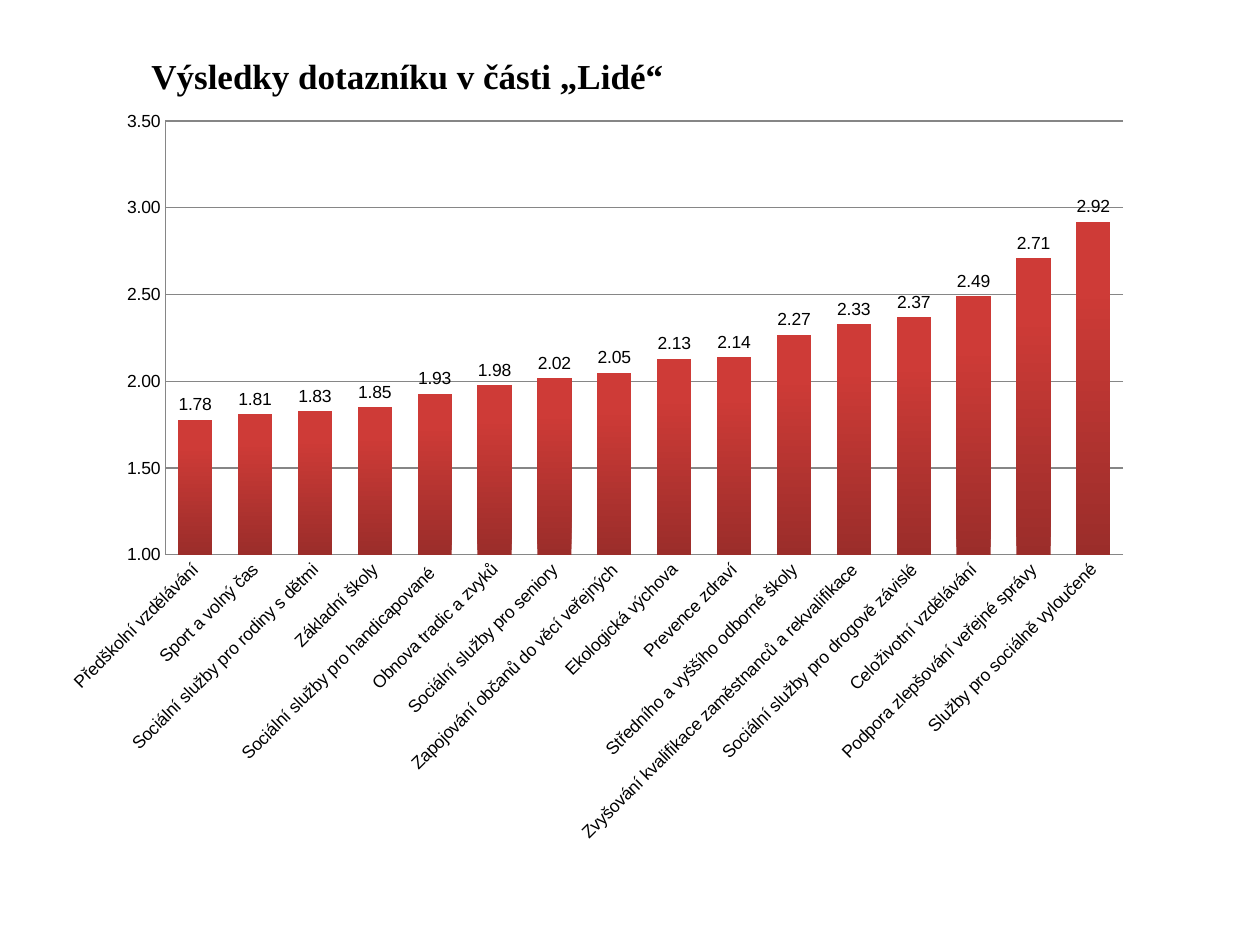
from dataclasses import dataclass

from pptx import Presentation
from pptx.chart.data import CategoryChartData
from pptx.dml.color import RGBColor
from pptx.enum.chart import XL_CHART_TYPE as ChartType
from pptx.enum.chart import XL_LABEL_POSITION as LabelPosition
from pptx.enum.chart import XL_TICK_MARK as TickMark
from pptx.enum.text import MSO_ANCHOR as Anchor
from pptx.enum.text import MSO_AUTO_SIZE as AutoSize
from pptx.enum.text import PP_ALIGN as Align
from pptx.oxml import parse_xml
from pptx.oxml.ns import nsdecls
from pptx.util import Pt

RATINGS = {
    "Předškolní vzdělávání": 1.78,
    "Sport a volný čas": 1.81,
    "Sociální služby pro rodiny s dětmi": 1.83,
    "Základní školy": 1.85,
    "Sociální služby pro handicapované ": 1.93,
    "Obnova tradic a zvyků": 1.98,
    "Sociální služby pro seniory": 2.02,
    "Zapojování občanů do věcí veřejných": 2.05,
    "Ekologická výchova": 2.13,
    "Prevence zdraví": 2.14,
    "Středního a vyššího odborné školy": 2.27,
    "Zvyšování kvalifikace zaměstnanců a rekvalifikace": 2.33,
    "Sociální služby pro drogově závislé": 2.37,
    "Celoživotní vzdělávání": 2.49,
    "Podpora zlepšování veřejné správy": 2.71,
    "Služby pro sociálně vyloučené": 2.92,
}


@dataclass(frozen=True)
class Theme:
    ink: RGBColor = RGBColor(0, 0, 0)
    grid: RGBColor = RGBColor(0x86, 0x86, 0x86)
    bar_bottom: RGBColor = RGBColor(0x9B, 0x2D, 0x2A)
    bar_top: RGBColor = RGBColor(0xCE, 0x3B, 0x37)
    title_font: str = "Times New Roman"
    chart_font: str = "Arial"
    title_size: int = 20
    chart_size: int = 10
    number_format: str = "#,##0.00"


class SlideBuilder:
    def __init__(self, deck, theme):
        self.theme = theme
        self.slide = deck.slides.add_slide(deck.slide_layouts[5])

    def style_font(self, font, family, size, bold=False):
        font.name = family
        font.size = Pt(size)
        font.bold = bold
        font.color.rgb = self.theme.ink

    def style_line(self, line):
        line.color.rgb = self.theme.grid
        line.width = Pt(0.75)

    def title(self, wording, left, top, width, height):
        heading = self.slide.shapes.title
        heading.left, heading.top = Pt(left), Pt(top)
        heading.width, heading.height = Pt(width), Pt(height)
        frame = heading.text_frame
        frame.text = wording
        frame.auto_size = AutoSize.NONE
        frame.vertical_anchor = Anchor.MIDDLE
        frame.margin_right = Pt(13)
        frame.margin_bottom = Pt(26)
        paragraph = frame.paragraphs[0]
        paragraph.alignment = Align.CENTER
        paragraph.space_after = Pt(3)
        self.style_font(paragraph.runs[0].font, self.theme.title_font,
                        self.theme.title_size, bold=True)

    def column_chart(self, ratings, left, top, width, height):
        theme = self.theme
        chart_data = CategoryChartData(number_format=theme.number_format)
        chart_data.categories = list(ratings)
        chart_data.add_series("Series 1", list(ratings.values()))
        chart = self.slide.shapes.add_chart(
            ChartType.COLUMN_CLUSTERED, Pt(left), Pt(top), Pt(width), Pt(height), chart_data
        ).chart
        chart.has_legend = False
        chart.has_title = False
        self.style_font(chart.font, theme.chart_font, theme.chart_size)
        self.style_axes(chart)
        self.style_bars(chart.plots[0])
        self.place_plot(chart, x=0.11, y=0.03, w=0.87, h=0.57)

    def style_axes(self, chart):
        for axis in (chart.category_axis, chart.value_axis):
            axis.major_tick_mark = TickMark.NONE
            axis.minor_tick_mark = TickMark.NONE
            self.style_line(axis.format.line)
            self.style_font(axis.tick_labels.font, self.theme.chart_font, self.theme.chart_size)
        scale = chart.value_axis
        scale.minimum_scale, scale.maximum_scale, scale.major_unit = 1, 3.5, 0.5
        scale.has_major_gridlines = True
        self.style_line(scale.major_gridlines.format.line)
        scale.tick_labels.number_format = self.theme.number_format
        scale.tick_labels.number_format_is_linked = False
        slant = chart.category_axis._element.txPr.bodyPr
        slant.set("rot", "-2700000")
        slant.set("vert", "horz")

    def style_bars(self, plot):
        plot.gap_width = 75
        plot.vary_by_categories = False
        fill = plot.series[0].format.fill
        fill.gradient()
        fill.gradient_angle = 90
        bottom, top = fill.gradient_stops
        bottom.color.rgb = self.theme.bar_bottom
        top.color.rgb = self.theme.bar_top
        top.position = 0.8
        labels = plot.series[0].data_labels
        labels.show_value = True
        labels.position = LabelPosition.OUTSIDE_END
        labels.number_format = self.theme.number_format
        labels.number_format_is_linked = False
        self.style_font(labels.font, self.theme.chart_font, self.theme.chart_size)

    def place_plot(self, chart, **fractions):
        plot_area = chart._chartSpace.chart.plotArea
        for old_layout in plot_area.findall("{*}layout"):
            plot_area.remove(old_layout)
        extents = "".join(f'<c:{side} val="{share}"/>' for side, share in fractions.items())
        plot_area.insert(0, parse_xml(
            f'<c:layout {nsdecls("c")}><c:manualLayout><c:layoutTarget val="inner"/>'
            f'<c:xMode val="edge"/><c:yMode val="edge"/>{extents}'
            "</c:manualLayout></c:layout>"
        ))


def main():
    deck = Presentation()
    deck.slide_width, deck.slide_height = Pt(720), Pt(540)
    builder = SlideBuilder(deck, Theme())
    builder.title("Výsledky dotazníku v části „Lidé“", 0, 9.4, 471.6, 90)
    builder.column_chart(RATINGS, 25.2, 56.2, 629.3, 434.9)
    deck.save("out.pptx")


if __name__ == "__main__":
    main()
